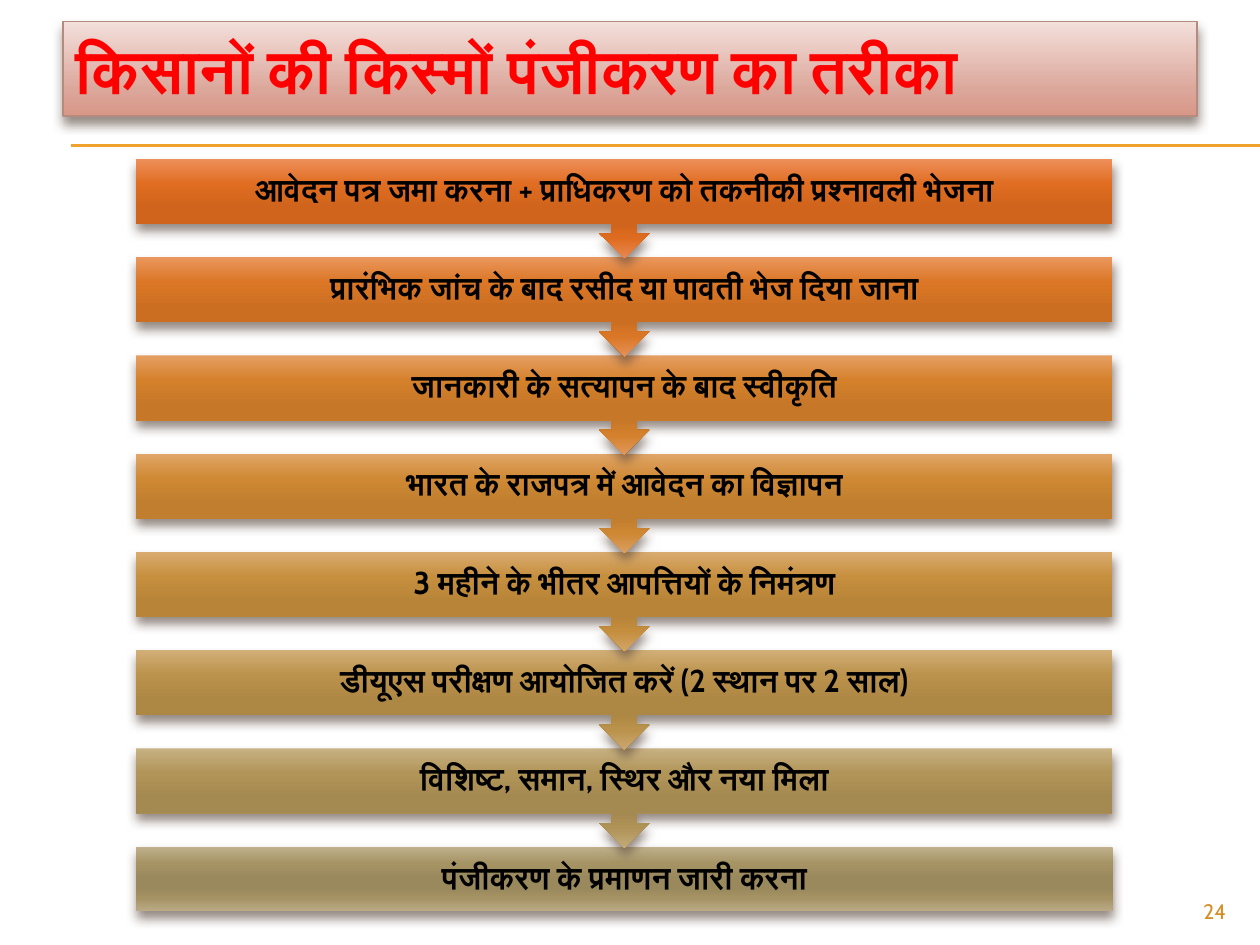
from lxml.etree import SubElement
from pptx import Presentation
from pptx.dml.color import RGBColor
from pptx.enum.shapes import MSO_CONNECTOR, MSO_SHAPE
from pptx.enum.text import MSO_ANCHOR, PP_ALIGN
from pptx.oxml.ns import qn
from pptx.util import Inches, Pt

FONT = "Cabin"
COLORS = {"title": "FF0000", "text": "000000", "number": "D48F29",
          "rule": "F0A22E", "border": "B58B80", "shadow": "4E3B30"}
TITLE = "किसानों की किस्मों पंजीकरण का तरीका"
TITLE_STOPS = [(0, "F3E0DB"), (72, "DCA79B"), (100, "D89787")]
PAGE_NUMBER = "24"
STOP_POSITIONS = (0, 25, 50, 65, 80, 100)
STEPS = [
    ("आवेदन पत्र जमा करना + प्राधिकरण को तकनीकी प्रश्नावली भेजना",
     ("EE8F5B", "E06D21", "D0641C", "D0641C", "DE6C20", "E88852")),
    ("प्रारंभिक जांच के बाद रसीद या पावती भेज दिया जाना",
     ("EA975E", "DB7726", "CC6E21", "CC6E21", "DA7726", "E59156")),
    ("जानकारी के सत्यापन के बाद स्वीकृति",
     ("E69F63", "D5812C", "C67727", "C67727", "D4802C", "E0985A")),
    ("भारत के राजपत्र में आवेदन का विज्ञापन",
     ("E1A668", "CF8934", "C07E2E", "C07E2E", "CE8834", "DB9F60")),
    ("3 महीने के भीतर आपत्तियों के निमंत्रण",
     ("D9AB6F", "C68F3E", "B88438", "B88438", "C48E3E", "D3A567")),
    ("डीयूएस परीक्षण आयोजित करें (2 स्थान पर 2 साल)",
     ("D1AF78", "BB924B", "AD8744", "AD8744", "BA924B", "CBA871")),
    ("विशिष्ट, समान, स्थिर और नया मिला",
     ("C8B182", "B09458", "A48950", "A48950", "AF9357", "C2AA7A")),
    ("पंजीकरण के प्रमाणन जारी करना",
     ("C0B18C", "A69465", "9A895C", "9A895C", "A59364", "BAAA85")),
]
LEFT, WIDTH = 1.08, 7.75
FIRST_TOP, PITCH = 1.26, 0.78
BOX_HEIGHT, CALLOUT_HEIGHT = 0.51, 0.79


def color(name):
    return RGBColor.from_string(COLORS[name])


def place(shape, left, top, width, height):
    shape.left, shape.top = Inches(left), Inches(top)
    shape.width, shape.height = Inches(width), Inches(height)


def fill_gradient(shape, stops):
    shape.fill.gradient()
    shape.fill.gradient_angle = 270
    gradient = shape.fill._xPr.find(qn("a:gradFill"))
    gradient.set("rotWithShape", "0")
    stop_list = gradient.find(qn("a:gsLst"))
    stop_list.clear()
    for position, value in stops:
        stop = SubElement(stop_list, qn("a:gs"), pos=str(position * 1000))
        SubElement(stop, qn("a:srgbClr"), val=value)


def cast_shadow(shape):
    shape.shadow.inherit = False
    effects = shape._element.spPr.find(qn("a:effectLst"))
    shadow = SubElement(effects, qn("a:outerShdw"), blurRad=str(Pt(6)),
                        dist=str(Pt(4)), dir="5400000", rotWithShape="0")
    tint = SubElement(shadow, qn("a:srgbClr"), val=COLORS["shadow"])
    SubElement(tint, qn("a:alpha"), val="60000")


def write(shape, text, size, color_name, align, bold, anchor):
    frame = shape.text_frame
    frame.word_wrap = True
    frame.vertical_anchor = anchor
    para = frame.paragraphs[0]
    para.alignment = align
    span = para.add_run()
    span.text = text
    span.font.size = Pt(size)
    span.font.bold = bold
    span.font.name = FONT
    span.font.color.rgb = color(color_name)
    SubElement(span.font._element, qn("a:cs"), typeface=FONT)
    return para


def add_rule(page, top):
    rule = page.shapes.add_connector(MSO_CONNECTOR.STRAIGHT, Inches(0.56),
                                     Inches(top), Inches(10), Inches(top))
    rule.line.color.rgb = color("rule")
    rule.line.width = Pt(0.75)
    SubElement(rule._element.spPr, qn("a:effectLst"))


def add_title(page):
    title = page.shapes.title
    place(title, 0.5, 0.17, 9, 0.75)
    fill_gradient(title, TITLE_STOPS)
    title.line.color.rgb = color("border")
    title.line.width = Pt(0.79)
    cast_shadow(title)
    write(title, TITLE, 35, "title", PP_ALIGN.LEFT, True, MSO_ANCHOR.MIDDLE)


def add_step(group, index):
    text, values = STEPS[index]
    top = FIRST_TOP + index * PITCH
    is_last = index == len(STEPS) - 1
    kind = MSO_SHAPE.RECTANGLE if is_last else MSO_SHAPE.UP_ARROW_CALLOUT
    height = BOX_HEIGHT if is_last else CALLOUT_HEIGHT
    step = group.shapes.add_shape(kind, Inches(LEFT), Inches(top),
                                  Inches(WIDTH), Inches(height))
    step.rotation = 0 if is_last else 180
    fill_gradient(step, zip(STOP_POSITIONS, values))
    step.line.fill.background()
    cast_shadow(step)

    label = group.shapes.add_textbox(Inches(LEFT), Inches(top),
                                     Inches(WIDTH), Inches(BOX_HEIGHT))
    frame = label.text_frame
    frame.margin_left = frame.margin_right = Inches(0.14)
    frame.margin_top = frame.margin_bottom = Inches(0.14)
    para = write(label, text, 18, "text", PP_ALIGN.CENTER, True, MSO_ANCHOR.MIDDLE)
    para.line_spacing = 0.9


def main():
    deck = Presentation()
    deck.slide_width, deck.slide_height = Inches(10), Inches(7.5)
    page = deck.slides.add_slide(deck.slide_layouts[5])
    for top in (1.15, 1.16):
        add_rule(page, top)
    add_title(page)
    flow = page.shapes.add_group_shape()
    for index in reversed(range(len(STEPS))):
        add_step(flow, index)
    number = page.shapes.add_textbox(Inches(9), Inches(7.08), Inches(0.83), Inches(0.27))
    write(number, PAGE_NUMBER, 12, "number", PP_ALIGN.RIGHT, False, MSO_ANCHOR.TOP)
    deck.save("out.pptx")


if __name__ == "__main__":
    main()
